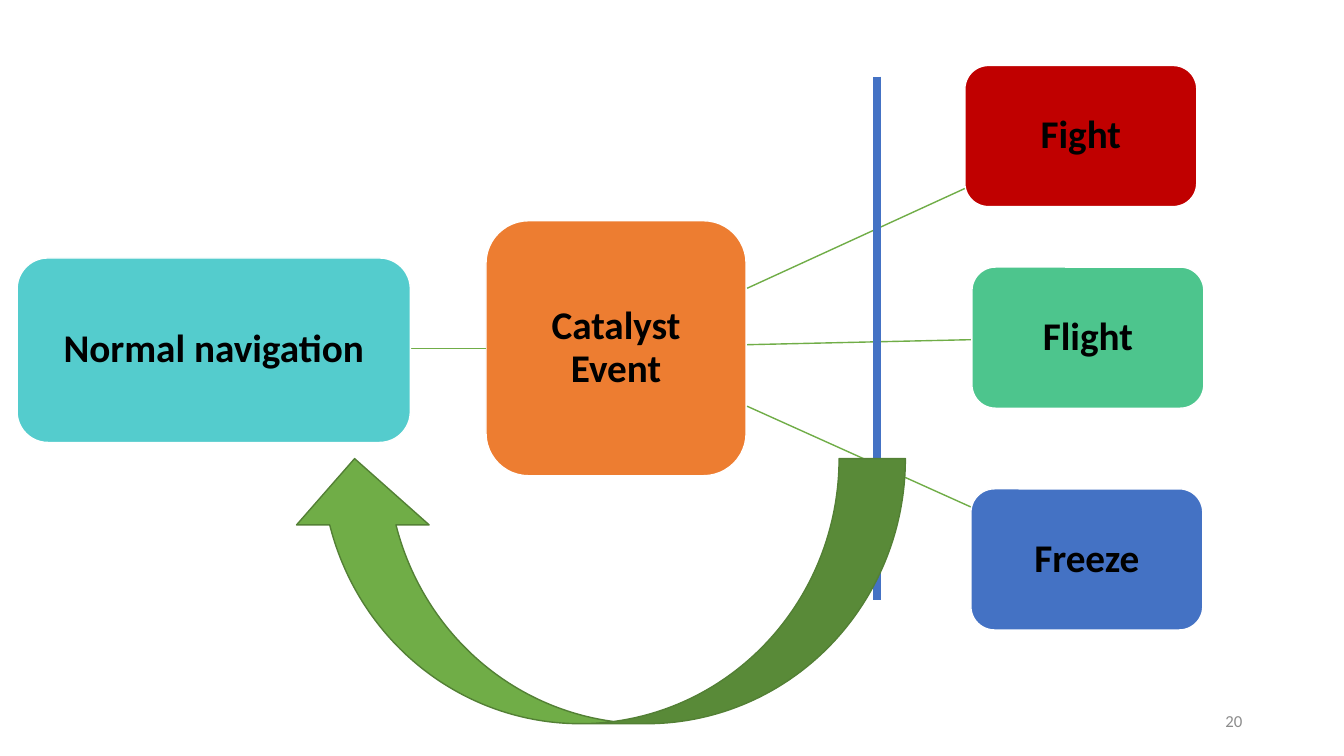
from pptx import Presentation
from pptx.dml.color import RGBColor
from pptx.enum.shapes import MSO_CONNECTOR, MSO_SHAPE
from pptx.enum.text import MSO_ANCHOR, PP_ALIGN
from pptx.oxml.ns import qn
from pptx.util import Inches, Pt
from lxml.etree import SubElement


def color(hex_code):
    return RGBColor.from_string(hex_code)


class Diagram:
    """Holds the style and the current slide."""
    font = "Calibri"
    green = "70AD47"
    blue = "4472C4"

    def __init__(self, slide):
        self.slide = slide

    def add_words(self, frame, words, size, hex_code, align, bold=False):
        frame.word_wrap = True
        frame.vertical_anchor = MSO_ANCHOR.MIDDLE
        paragraph = frame.paragraphs[0]
        paragraph.alignment = align
        run = paragraph.add_run()
        run.text = words
        run.font.name = self.font
        run.font.size = Pt(size)
        run.font.bold = bold
        run.font.color.rgb = color(hex_code)
        return paragraph

    def shape(self, preset, box, fill, outline):
        shape = self.slide.shapes.add_shape(preset, *map(Inches, box))
        shape.shadow.inherit = False
        shape.fill.solid()
        shape.fill.fore_color.rgb = color(fill)
        shape.line.color.rgb = color(outline)
        shape.line.width = Pt(1)
        return shape

    def stage(self, words, box, fill):
        frame = self.shape(MSO_SHAPE.ROUNDED_RECTANGLE, box, fill, "FFFFFF").text_frame
        frame.margin_left = frame.margin_right = Inches(0.08)
        frame.margin_top = frame.margin_bottom = Inches(0.08)
        paragraph = self.add_words(frame, words, 28, "000000", PP_ALIGN.CENTER, bold=True)
        paragraph.line_spacing = 0.9

    def line(self, start, end, hex_code, width):
        line = self.slide.shapes.add_connector(
            MSO_CONNECTOR.STRAIGHT, *map(Inches, start + end))
        line.line.color.rgb = color(hex_code)
        line.line.width = Pt(width)
        SubElement(line._element.spPr, qn("a:effectLst"))

    def return_arrow(self, box):
        arrow = self.shape(MSO_SHAPE.CURVED_UP_ARROW, box, self.green, "538035")
        arrow._element.spPr.find(qn("a:xfrm")).set("flipH", "1")

    def page_number(self, number, box):
        frame = self.slide.shapes.add_textbox(*map(Inches, box)).text_frame
        self.add_words(frame, number, 12, "8C8C8C", PP_ALIGN.RIGHT)


def main():
    presentation = Presentation()
    presentation.slide_width = Inches(13.33)
    presentation.slide_height = Inches(7.5)
    diagram = Diagram(presentation.slides.add_slide(presentation.slide_layouts[6]))

    # Catalyst and the normal state before it
    diagram.stage("Catalyst Event", (4.82, 2.19, 2.58, 2.53), "ED7D31")
    diagram.line((4.82, 3.46), (4.07, 3.46), diagram.green, 1)
    diagram.stage("Normal navigation", (0.17, 2.56, 3.9, 1.83), "54CCCD")

    # Responses: name, left, top, fill, height where the link leaves and arrives
    responses = [
        ("Flight", 9.64, 2.65, "4DC58D", 3.42, 3.37),
        ("Freeze", 9.63, 4.85, diagram.blue, 4.03, 5.03),
        ("Fight", 9.57, 0.65, "C00000", 2.86, 1.87),
    ]
    for response, left, top, fill, leave, arrive in responses:
        diagram.line((7.41, leave), (left, arrive), diagram.green, 1)
        diagram.stage(response, (left, top, 2.3, 1.4), fill)

    # Barrier and the way back to normal
    diagram.line((8.7, 0.76), (8.7, 5.95), diagram.blue, 6)
    diagram.return_arrow((2.86, 4.55, 6.12, 2.63))

    # Footer
    diagram.page_number("20", (9.42, 6.95, 3, 0.4))

    presentation.save("out.pptx")


if __name__ == "__main__":
    main()
